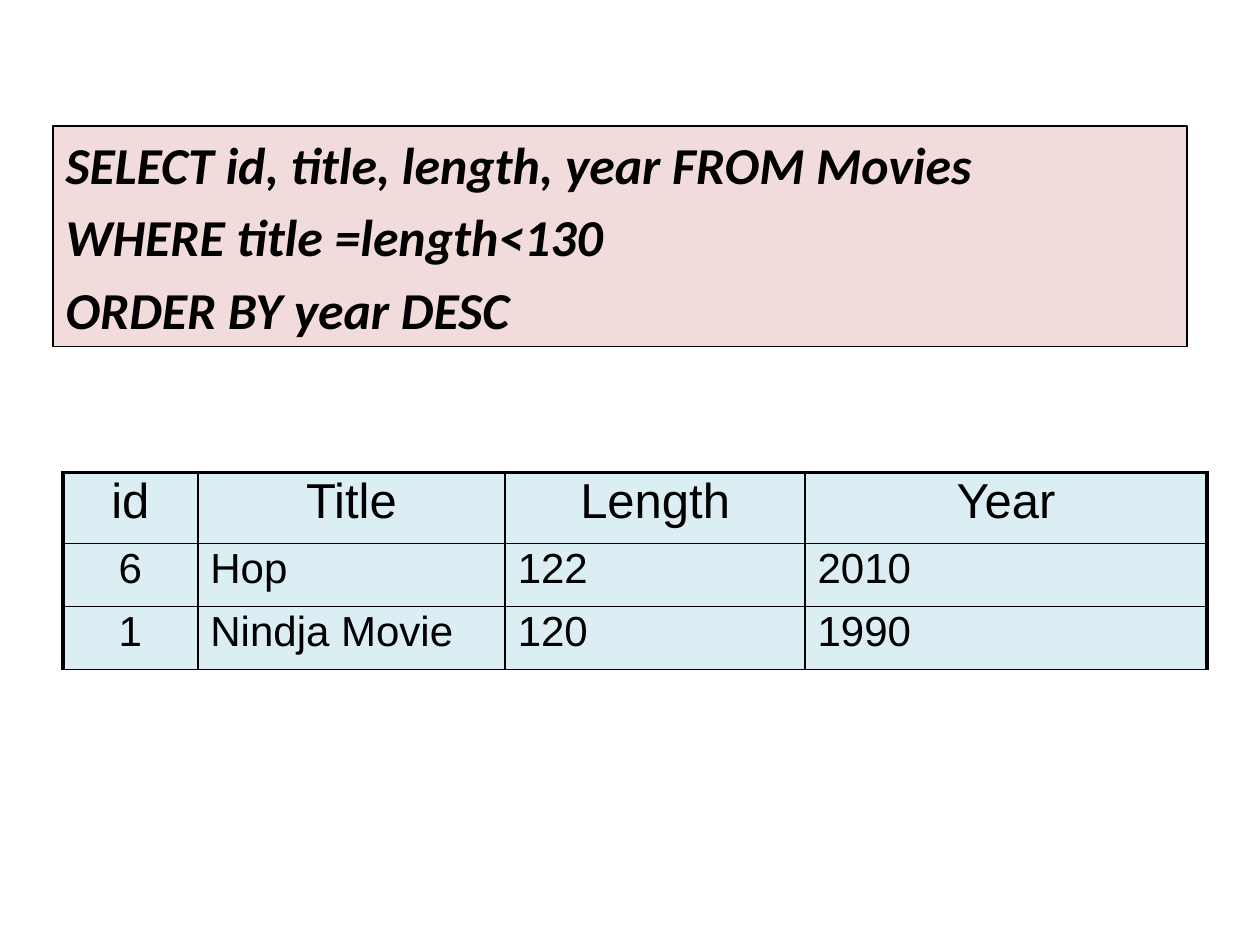
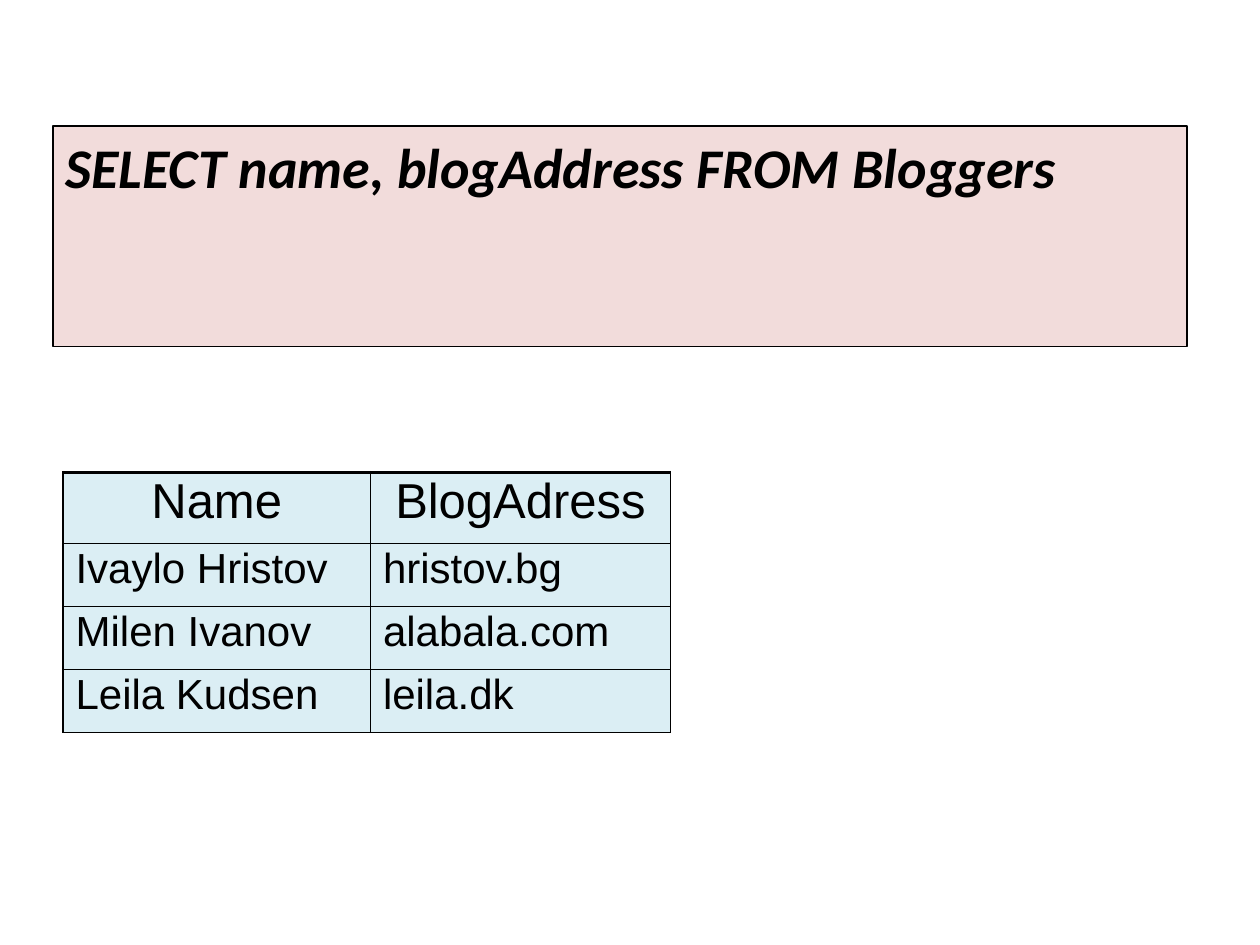
from dataclasses import dataclass

from lxml.etree import SubElement
from pptx import Presentation
from pptx.dml.color import RGBColor
from pptx.enum.text import MSO_ANCHOR, MSO_AUTO_SIZE, PP_ALIGN
from pptx.oxml.ns import qn
from pptx.slide import Slide
from pptx.table import _Cell
from pptx.text.text import _Paragraph
from pptx.util import Emu, Inches, Pt

BLACK = RGBColor(0x00, 0x00, 0x00)
QUERY_PINK = RGBColor(0xF2, 0xDC, 0xDB)
RESULT_BLUE = RGBColor(0xDB, 0xEE, 0xF4)

SLIDE_WIDTH, SLIDE_HEIGHT = Inches(10), Inches(7.5)
GRID_COLUMNS, GRID_ROWS = 100, 30
HEADER_ROWS, RECORD_ROWS = 2.25, 2
THIN, THICK = Pt(1), Pt(2.25)
HEADER_SIZE, RECORD_SIZE = 28, 24


@dataclass(frozen=True)
class Column:
    heading: str
    span: float
    align: PP_ALIGN = PP_ALIGN.LEFT


@dataclass(frozen=True)
class QueryExample:
    query: list[str]
    query_size: float
    columns: list[Column]
    records: list[list[str]]
    thick_sides: bool


NAME_SPAN, DETAIL_SPAN = 24.4, 23.8

EXAMPLES = [
    QueryExample(
        query=[
            "SELECT id, title, length, year FROM Movies",
            "WHERE title =length<130",
            "ORDER BY year DESC",
        ],
        query_size=29.6,
        columns=[
            Column("id", 10.7, PP_ALIGN.CENTER),
            Column("Title", NAME_SPAN),
            Column("Length", DETAIL_SPAN),
            Column("Year", 31.9),
        ],
        records=[["6", "Hop", "122", "2010"], ["1", "Nindja Movie", "120", "1990"]],
        thick_sides=True,
    ),
    QueryExample(
        query=["SELECT name, blogAddress FROM Bloggers"],
        query_size=32,
        columns=[Column("Name", NAME_SPAN), Column("BlogAdress", DETAIL_SPAN)],
        records=[
            ["Ivaylo Hristov", "hristov.bg"],
            ["Milen Ivanov", "alabala.com"],
            ["Leila Kudsen", "leila.dk"],
        ],
        thick_sides=False,
    ),
]


def across(columns: float) -> Emu:
    return Emu(round(SLIDE_WIDTH * columns / GRID_COLUMNS))


def down(rows: float) -> Emu:
    return Emu(round(SLIDE_HEIGHT * rows / GRID_ROWS))


def set_space_before(para: _Paragraph, percent: int) -> None:
    """Set the space before a paragraph as a share of its line height."""
    space = SubElement(para._p.get_or_add_pPr(), qn("a:spcBef"))
    SubElement(space, qn("a:spcPct"), val=str(percent * 1000))


def format_runs(para: _Paragraph, font: str, size: float, strong: bool = False) -> None:
    for span in para.runs:
        span.font.name = font
        span.font.size = Pt(size)
        span.font.bold = span.font.italic = strong
        span.font.color.rgb = BLACK


def add_query(page: Slide, example: QueryExample) -> None:
    box = page.placeholders[1]
    box.left, box.top = across(4.2), down(4)
    box.width, box.height = across(90), down(7)
    box.fill.solid()
    box.fill.fore_color.rgb = QUERY_PINK
    box.line.color.rgb = BLACK
    box.line.width = Pt(0.75)
    frame = box.text_frame
    frame.auto_size = MSO_AUTO_SIZE.NONE
    frame.vertical_anchor = MSO_ANCHOR.TOP
    frame.text = "\n".join(example.query)
    for para in frame.paragraphs:
        set_space_before(para, 20)
        SubElement(para._p.get_or_add_pPr(), qn("a:buNone"))
        format_runs(para, "Calibri", example.query_size, strong=True)


def set_borders(cell: _Cell, left: Pt, right: Pt, top: Pt, bottom: Pt) -> None:
    properties = cell._tc.get_or_add_tcPr()
    for side, width in zip("LRTB", (left, right, top, bottom)):
        line = SubElement(properties, qn(f"a:ln{side}"), w=str(width))
        fill = SubElement(line, qn("a:solidFill"))
        SubElement(fill, qn("a:srgbClr"), val=str(BLACK))


def fill_cell(cell: _Cell, text: str, size: float, align: PP_ALIGN) -> None:
    cell.fill.solid()
    cell.fill.fore_color.rgb = RESULT_BLUE
    cell.text_frame.text = text
    para = cell.text_frame.paragraphs[0]
    set_space_before(para, 30)
    para.line_spacing = 0.9
    para.alignment = align
    format_runs(para, "Arial", size)


def add_result(page: Slide, example: QueryExample) -> None:
    columns = example.columns
    rows = [[column.heading for column in columns], *example.records]
    heights = [HEADER_ROWS] + [RECORD_ROWS] * len(example.records)
    width = sum(column.span for column in columns)
    table = page.shapes.add_table(
        len(rows), len(columns), across(5), down(15), across(width), down(sum(heights))
    ).table
    table.first_row = table.horz_banding = False
    for grid_column, column in zip(table.columns, columns):
        grid_column.width = across(column.span)

    side = THICK if example.thick_sides else THIN
    last = len(columns) - 1
    for row_index, (texts, height) in enumerate(zip(rows, heights)):
        table.rows[row_index].height = down(height)
        is_header = row_index == 0
        for column_index, (text, column) in enumerate(zip(texts, columns)):
            cell = table.cell(row_index, column_index)
            set_borders(
                cell,
                left=side if column_index == 0 else THIN,
                right=side if column_index == last else THIN,
                top=THICK if is_header else THIN,
                bottom=THIN,
            )
            size = HEADER_SIZE if is_header else RECORD_SIZE
            fill_cell(cell, text, size, PP_ALIGN.CENTER if is_header else column.align)


def main() -> None:
    deck = Presentation()
    deck.slide_width, deck.slide_height = SLIDE_WIDTH, SLIDE_HEIGHT
    for example in EXAMPLES:
        page = deck.slides.add_slide(deck.slide_layouts[1])
        title = page.shapes.title.element
        title.getparent().remove(title)
        add_query(page, example)
        add_result(page, example)
    deck.save("out.pptx")


if __name__ == "__main__":
    main()
